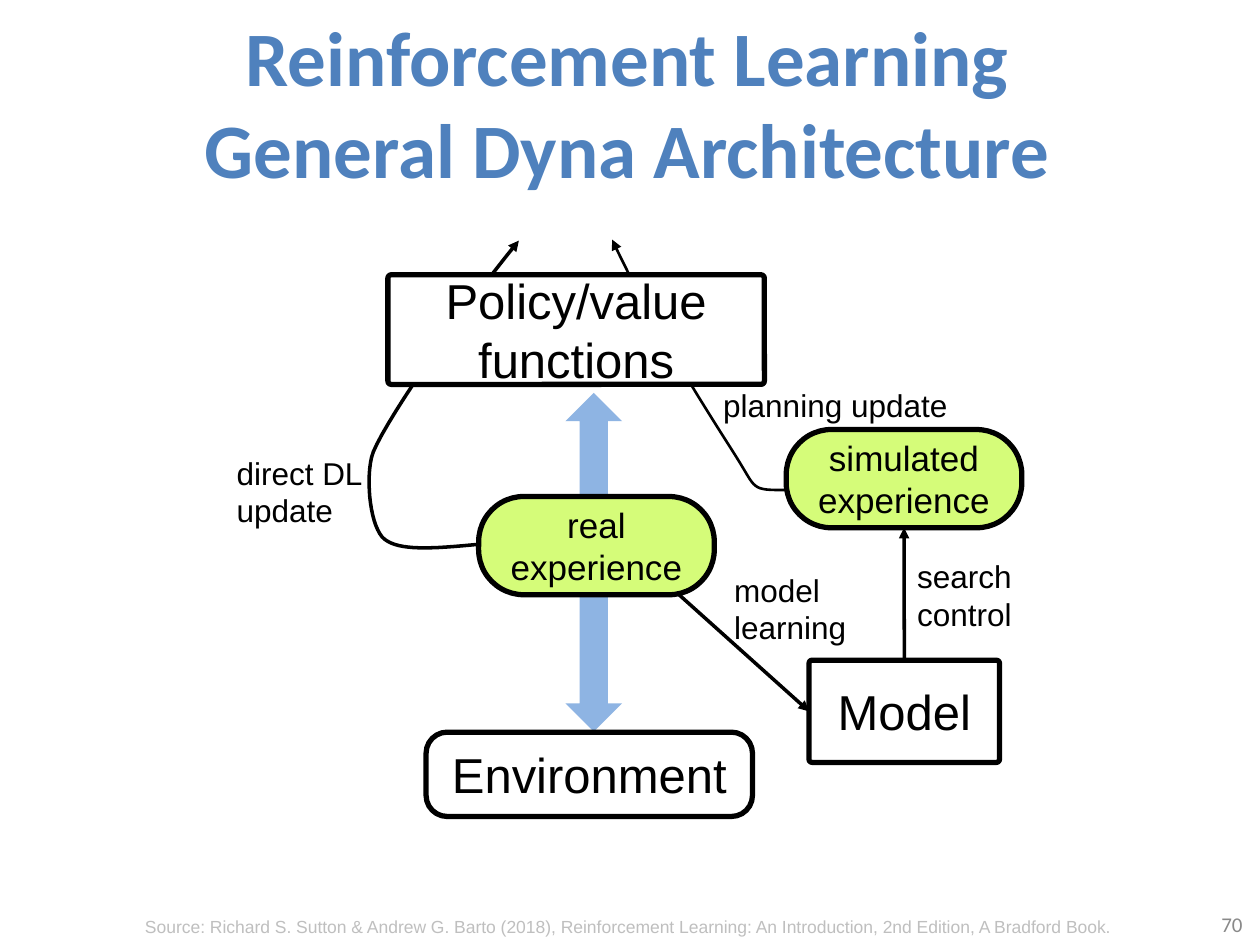
from dataclasses import dataclass

from pptx import Presentation
from pptx import util as u
from pptx.dml.color import RGBColor
from pptx.enum import shapes, text
from pptx.oxml.ns import qn
from lxml import etree

SHAPE = shapes.MSO_SHAPE
ALIGN = text.PP_ALIGN
MIDDLE = text.MSO_ANCHOR.MIDDLE


@dataclass(frozen=True)
class Theme:
    black: str = "000000"
    white: str = "FFFFFF"
    title: str = "4F81BD"
    number: str = "898989"
    source: str = "BFBFBF"
    arrow: str = "8EB4E3"
    experience: str = "D5FC79"
    title_size: int = 44
    node_size: int = 28
    experience_size: int = 20
    label_size: int = 18
    number_size: int = 12
    source_size: int = 10
    heading_font: str = "Calibri"
    body_font: str = "Arial"
    border: float = 3


def bezier(start, segments, steps=16):
    """Points along a chain of cubic curves."""
    points = [start]
    for c1, c2, end in segments:
        p0 = points[-1]
        for i in range(1, steps + 1):
            t = i / steps
            s = 1 - t
            points.append(tuple(
                s**3 * a + 3 * s * s * t * b + 3 * s * t * t * c + t**3 * d
                for a, b, c, d in zip(p0, c1, c2, end)))
    return points


class Diagram:
    def __init__(self, slide, theme):
        self.slide, self.theme = slide, theme

    def set_text(self, tf, words, size, color, font, align, bold=False):
        p = tf.paragraphs[0]
        p.text = words
        p.alignment = align
        p.font.size = u.Pt(size)
        p.font.name = font
        p.font.bold = bold
        p.font.color.rgb = RGBColor.from_string(color)

    def textbox(self, box, words, size, color=None, font=None,
                align=ALIGN.LEFT, anchor=None, wrap=True, bold=False):
        sp = self.slide.shapes.add_textbox(*map(u.Cm, box))
        tf = sp.text_frame
        tf.word_wrap = wrap
        if anchor is not None:
            tf.vertical_anchor = anchor
        self.set_text(tf, words, size, color or self.theme.black,
                      font or self.theme.body_font, align, bold)

    def label(self, box, words):
        self.textbox(box, words, self.theme.label_size, wrap=False)

    def shape(self, kind, box, fill):
        sp = self.slide.shapes.add_shape(kind, *map(u.Cm, box))
        sp.shadow.inherit = False
        sp.fill.solid()
        sp.fill.fore_color.rgb = RGBColor.from_string(fill)
        sp.line.fill.background()
        return sp

    def node(self, box, words, corner, fill=None, size=None):
        th = self.theme
        sp = self.shape(SHAPE.ROUNDED_RECTANGLE, box, fill or th.white)
        sp.adjustments[0] = corner
        self.stroke(sp, th.border)
        tf = sp.text_frame
        tf.word_wrap = True
        tf.vertical_anchor = MIDDLE
        tf.margin_left = tf.margin_right = tf.margin_top = tf.margin_bottom = 0
        self.set_text(tf, words, size or th.node_size, th.black,
                      th.body_font, ALIGN.CENTER)
        return sp

    def stroke(self, sp, width, arrow=False):
        sp.line.color.rgb = RGBColor.from_string(self.theme.black)
        sp.line.width = u.Pt(width)
        if arrow:
            ln = sp._element.spPr.find(qn("a:ln"))
            etree.SubElement(ln, qn("a:tailEnd"), type="triangle")

    def arrow(self, start, end, begin_at=None, end_at=None, width=2):
        cn = self.slide.shapes.add_connector(
            shapes.MSO_CONNECTOR.STRAIGHT, *map(u.Cm, start + end))
        if begin_at:
            cn.begin_connect(*begin_at)
        if end_at:
            cn.end_connect(*end_at)
        self.stroke(cn, width, arrow=True)
        etree.SubElement(cn._element.spPr, qn("a:effectLst"))

    def curve(self, start, segments, width):
        points = [tuple(map(u.Cm, pt)) for pt in bezier(start, segments)]
        fb = self.slide.shapes.build_freeform(*points[0])
        fb.add_line_segments(points[1:], close=False)
        sp = fb.convert_to_shape()
        sp.shadow.inherit = False
        sp.fill.background()
        self.stroke(sp, width, arrow=True)


def main():
    prs = Presentation()
    prs.slide_width, prs.slide_height = u.Cm(25.4), u.Cm(19.05)
    th = Theme()
    d = Diagram(prs.slides.add_slide(prs.slide_layouts[6]), th)

    # Two-way arrow behind the nodes
    d.shape(SHAPE.UP_DOWN_ARROW, (11.4, 7.92, 1.14, 6.83), th.arrow)

    # Title, page number and source
    d.textbox((1.22, 0.33, 22.86, 3.45),
              "Reinforcement Learning\nGeneral Dyna Architecture",
              th.title_size, th.title, th.heading_font, ALIGN.CENTER,
              MIDDLE, bold=True)
    d.textbox((19.38, 18.11, 5.92, 1.02), "70", th.number_size, th.number,
              th.heading_font, ALIGN.RIGHT, MIDDLE)
    d.textbox((1.22, 18.34, 22.86, 0.69),
              "Source: Richard S. Sutton & Andrew G. Barto (2018), "
              "Reinforcement Learning: An Introduction, 2nd Edition, "
              "A Bradford Book.",
              th.source_size, th.source, align=ALIGN.CENTER)

    # Nodes below the policy
    d.node((8.59, 14.76, 6.58, 1.7), "Environment", 0.25)
    model = d.node((16.31, 13.31, 3.84, 2.06), "Model", 0.03)
    simulated, _ = [
        d.node((x, y, 4.75, 1.98), words, 0.46, th.experience,
               th.experience_size)
        for x, y, words in ((15.85, 8.66, "simulated experience"),
                            (9.65, 10.01, "real experience"))]

    # Straight arrows
    d.arrow((13.69, 11.99), (16.31, 14.34), end_at=(model, 1))
    d.arrow((18.23, 13.31), (18.23, 10.64), (model, 0), (simulated, 2))

    # Arrow labels
    d.label((18.24, 11.1, 2.62, 1.8), "search\ncontrol")
    d.label((14.55, 11.38, 2.79, 1.8), "model\nlearning")
    d.label((14.33, 7.65, 5.16, 1.02), "planning update")
    d.label((4.52, 9.02, 3.33, 1.8), "direct DL\nupdate")

    # Curved update arrows, passing behind the policy node
    d.curve((15.88, 9.88),
            [((15.11, 9.88), (15.27, 9.88), (14.83, 9.19)),
             ((14.38, 8.48), (13.18, 6.63), (12.34, 4.83))], 1.5)
    d.curve((9.68, 10.97),
            [((8.66, 11.07), (8.05, 11.1), (7.75, 10.87)),
             ((7.47, 10.64), (7.37, 9.73), (7.49, 9.22)),
             ((7.59, 8.74), (9.25, 6.32), (10.46, 4.85))], 2)
    d.node((7.82, 5.54, 7.59, 2.21), "Policy/value functions", 0.03)

    prs.save("out.pptx")


if __name__ == "__main__":
    main()
